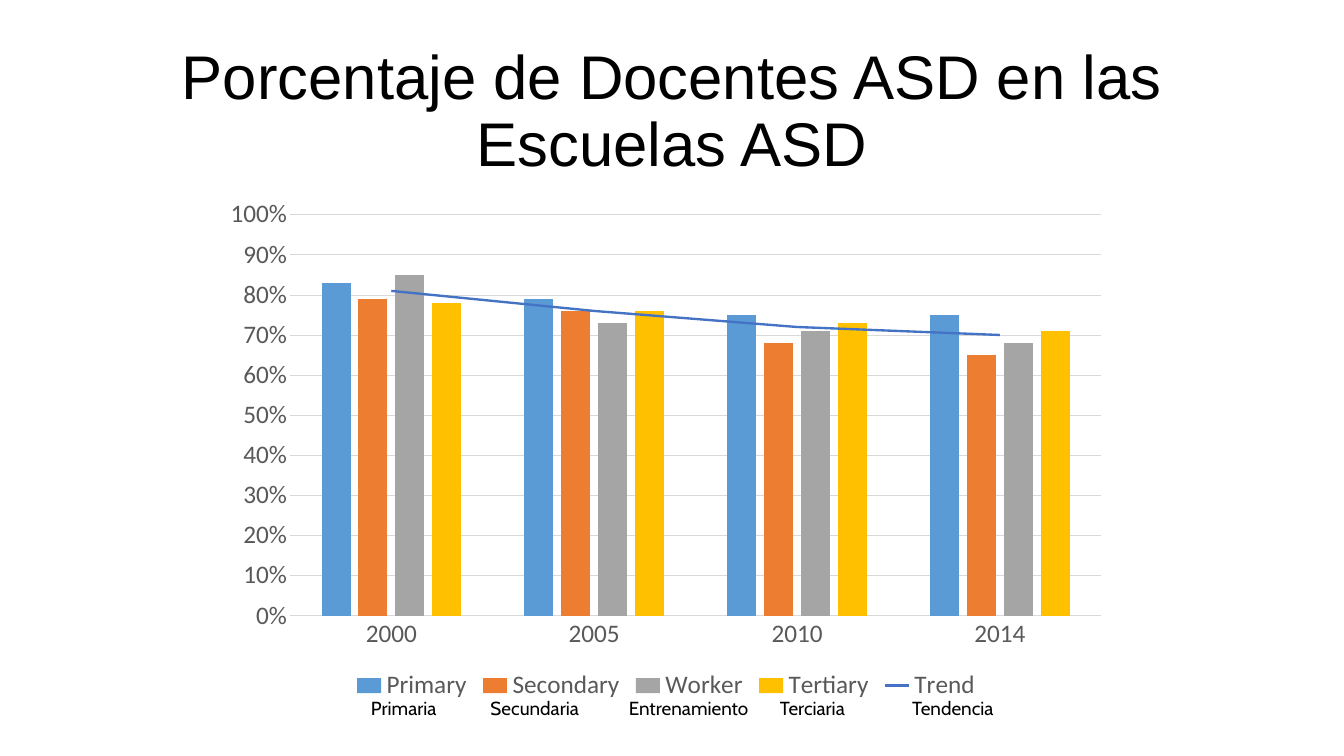
from lxml.etree import SubElement
from pptx import Presentation
from pptx.chart.data import CategoryChartData
from pptx.dml.color import RGBColor
from pptx.enum.chart import (XL_CHART_TYPE, XL_LEGEND_POSITION,
                             XL_MARKER_STYLE, XL_TICK_MARK)
from pptx.enum.text import MSO_ANCHOR, PP_ALIGN
from pptx.oxml.ns import qn
from pptx.util import Inches, Pt

COLORS = {
    "text": "000000", "label": "595959", "grid": "D9D9D9",
    "Primary": "5B9BD5", "Secondary": "ED7D31", "Worker": "A5A5A5",
    "Tertiary": "FFC000", "Trend": "4472C4",
}
YEARS = ["2000", "2005", "2010", "2014"]
SHARES = {
    "Primary": [0.83, 0.79, 0.75, 0.75],
    "Secondary": [0.79, 0.76, 0.68, 0.65],
    "Worker": [0.85, 0.73, 0.71, 0.68],
    "Tertiary": [0.78, 0.76, 0.73, 0.71],
    "Trend": [0.81, 0.76, 0.72, 0.70],
}
# Spanish legend words: text, left, width
WORDS = [
    ("Primaria", 4.81, 1.83), ("Secundaria", 6.39, 1.92),
    ("Entrenamiento", 8.22, 1.92), ("Terciaria", 10.22, 1.58),
    ("Tendencia", 11.97, 1.67),
]


def color(name):
    return RGBColor.from_string(COLORS[name])


def set_font(font, name, size, tone):
    font.name = name
    font.size = Pt(size)
    font.color.rgb = color(tone)


def set_line(line, tone, width):
    line.color.rgb = color(tone)
    line.width = Pt(width)


def add_text(slide, text, box, name, size):
    frame = slide.shapes.add_textbox(*map(Inches, box)).text_frame
    frame.word_wrap = True
    run = frame.paragraphs[0].add_run()
    run.text = text
    set_font(run.font, name, size, "text")
    return frame


def add_title(slide, text):
    frame = add_text(slide, text, (1.22, 0.53, 15.33, 1.93), "Arial", 58.7)
    frame.margin_left = frame.margin_right = Inches(0.16)
    frame.margin_top = frame.margin_bottom = Inches(0.08)
    frame.vertical_anchor = MSO_ANCHOR.MIDDLE
    frame.paragraphs[0].alignment = PP_ALIGN.CENTER
    frame.paragraphs[0].line_spacing = 0.9


def split_trend(chart):
    """Move the last column series to a line plot on the same axes."""
    trend = chart.plots[0].series[-1]._element
    root = trend.getparent()
    for flag in trend.findall(qn("c:invertIfNegative")):
        trend.remove(flag)
    line = root.makeelement(qn("c:lineChart"))
    root.addnext(line)
    SubElement(line, qn("c:grouping")).set("val", "standard")
    SubElement(line, qn("c:varyColors")).set("val", "0")
    line.append(trend)
    SubElement(line, qn("c:marker")).set("val", "1")
    for axis in root.findall(qn("c:axId")):
        SubElement(line, qn("c:axId")).set("val", axis.get("val"))


def style_axes(chart):
    for axis in (chart.category_axis, chart.value_axis):
        axis.major_tick_mark = axis.minor_tick_mark = XL_TICK_MARK.NONE
        set_font(axis.tick_labels.font, "Calibri", 24, "label")
    set_line(chart.category_axis.format.line, "grid", 0.75)
    scale = chart.value_axis
    scale.minimum_scale, scale.maximum_scale = 0, 1
    scale.major_unit = 0.1
    scale.format.line.fill.background()
    scale.has_major_gridlines = True
    set_line(scale.major_gridlines.format.line, "grid", 0.75)
    scale.tick_labels.number_format = "0%"
    scale.tick_labels.number_format_is_linked = False


def add_graph(slide):
    data = CategoryChartData(number_format="0%")
    data.categories = YEARS
    for name, shares in SHARES.items():
        data.add_series(name, shares)
    box = map(Inches, (2.81, 2.5, 12, 6.84))
    chart = slide.shapes.add_chart(
        XL_CHART_TYPE.COLUMN_CLUSTERED, *box, data).chart
    set_font(chart.font, "Calibri", 10, "text")
    chart.has_title = False
    chart.has_legend = True
    chart.legend.position = XL_LEGEND_POSITION.BOTTOM
    chart.legend.include_in_layout = False
    set_font(chart.legend.font, "Calibri", 24, "label")
    style_axes(chart)
    split_trend(chart)
    bars, line = chart.plots
    bars.gap_width, bars.overlap = 219, -27
    bars.vary_by_categories = False
    for ser in bars.series:
        ser.format.fill.solid()
        ser.format.fill.fore_color.rgb = color(ser.name)
    trend = line.series[0]
    set_line(trend.format.line, trend.name, 2.25)
    trend.marker.style = XL_MARKER_STYLE.NONE
    trend.smooth = False


def main():
    deck = Presentation()
    deck.slide_width, deck.slide_height = Inches(17.78), Inches(10)
    slide = deck.slides.add_slide(deck.slide_layouts[6])
    add_title(slide, "Porcentaje de Docentes ASD en las Escuelas ASD")
    add_graph(slide)
    for word, left, width in WORDS:
        add_text(slide, word, (left, 9.17, width, 0.4), "Cabin", 18)
    deck.save("out.pptx")


if __name__ == "__main__":
    main()
